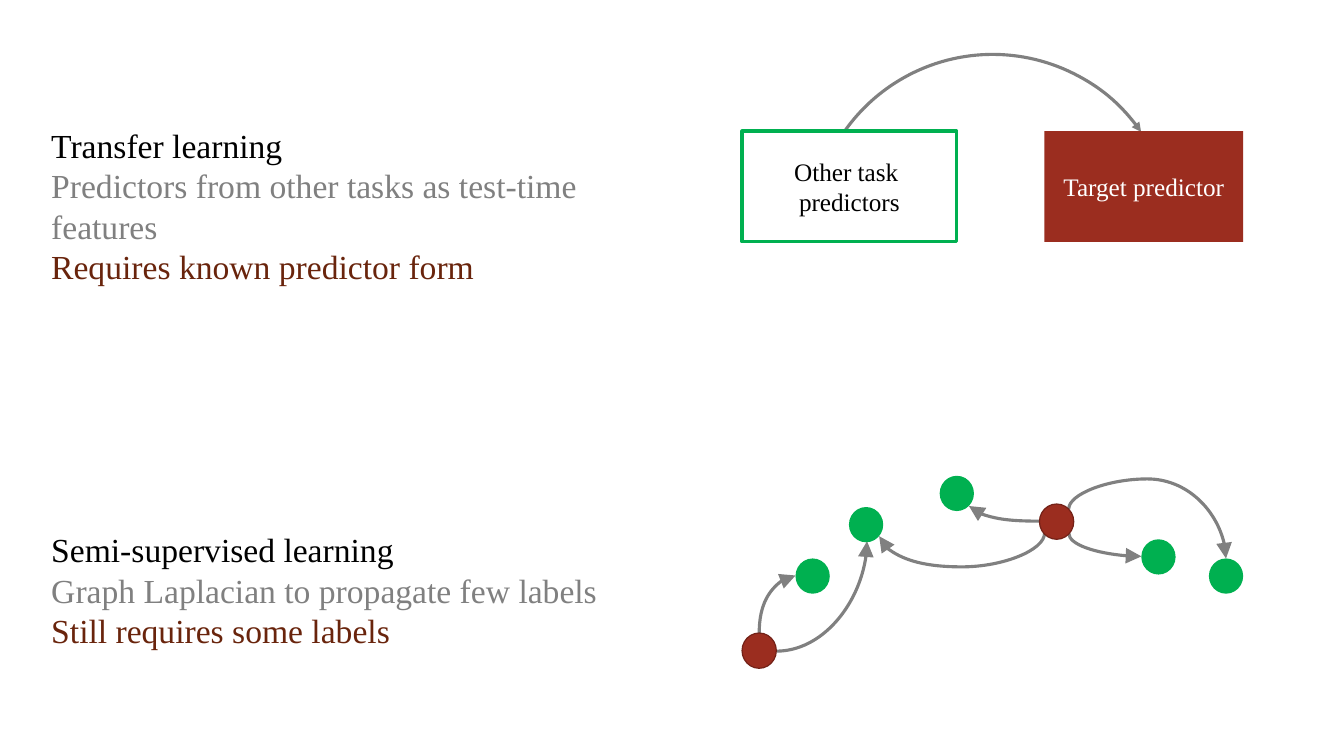
from lxml.etree import SubElement
from pptx import Presentation
from pptx.dml.color import RGBColor
from pptx.enum.shapes import MSO_CONNECTOR, MSO_SHAPE
from pptx.enum.text import MSO_ANCHOR, MSO_AUTO_SIZE, PP_ALIGN
from pptx.oxml.ns import qn
from pptx.util import Inches, Pt

FONT = "Times New Roman"
BLACK = RGBColor(0x00, 0x00, 0x00)
WHITE = RGBColor(0xFF, 0xFF, 0xFF)
GRAY = RGBColor(0x80, 0x80, 0x80)
BROWN = RGBColor(0x69, 0x24, 0x0C)
GREEN = RGBColor(0x00, 0xB0, 0x50)
RED = RGBColor(0x9B, 0x2D, 0x1F)
DARK_RED = RGBColor(0x73, 0x21, 0x17)

NODE_W, NODE_H = 0.34, 0.35
UNLABELED = [(9.32, 4.72), (7.89, 5.54), (11.32, 5.35), (11.99, 5.54), (8.42, 5.03)]
LABELED = [(10.31, 5), (7.36, 6.28)]
CURVES = [
    ((10.6, 5.29), (11.32, 5.52), 270, None),
    ((10.31, 5.17), (9.61, 5.02), 180, None),
    ((10.36, 5.29), (8.72, 5.32), 90, 11.16),
    ((7.7, 6.46), (8.6, 5.37), 0, None),
    ((7.53, 6.28), (7.89, 5.71), 90, None),
    ((10.6, 5.05), (12.16, 5.54), 270, -0.61),
]


def add_run(p, text, size, color):
    r = p.add_run()
    r.text = text
    r.font.name = FONT
    r.font.size = Pt(size)
    r.font.color.rgb = color


def add_summary(s, left, top, width, lines):
    sp = s.shapes.add_textbox(Inches(left), Inches(top), Inches(width), Inches(1.31))
    tf = sp.text_frame
    tf.word_wrap = True
    tf.auto_size = MSO_AUTO_SIZE.SHAPE_TO_FIT_TEXT
    for i, (text, color) in enumerate(zip(lines, (BLACK, GRAY, BROWN))):
        p = tf.add_paragraph() if i else tf.paragraphs[0]
        add_run(p, text, 24, color)


def add_shape(s, kind, left, top, width, height, fill=None, line=None, weight=2.25):
    sp = s.shapes.add_shape(kind, Inches(left), Inches(top), Inches(width), Inches(height))
    sp.shadow.inherit = False
    if fill is None:
        sp.fill.background()
    else:
        sp.fill.solid()
        sp.fill.fore_color.rgb = fill
    if line is None:
        sp.line.fill.background()
    else:
        sp.line.color.rgb = line
        sp.line.width = Pt(weight)
    return sp


def add_box(s, left, width, lines, color, fill=None, line=None):
    sp = add_shape(s, MSO_SHAPE.RECTANGLE, left, 1.3, width, 1.1, fill, line)
    tf = sp.text_frame
    tf.word_wrap = True
    tf.vertical_anchor = MSO_ANCHOR.MIDDLE
    p = tf.paragraphs[0]
    p.alignment = PP_ALIGN.CENTER
    for i, text in enumerate(lines):
        if i:
            p.add_line_break()
        add_run(p, text, 18, color)


def add_arrowhead(sp, size):
    ln = sp.line._get_or_add_ln()
    SubElement(ln, qn("a:tailEnd"), type="triangle", w=size, len=size)


def add_arc(s):
    sp = add_shape(s, MSO_SHAPE.ARC, 8.05, 0.54, 3.59, 3.59, line=GRAY)
    sp.rotation = 326.7
    sp.adjustments[0] = 148.96
    sp.adjustments[1] = 215.06
    add_arrowhead(sp, "med")


def add_curve(s, start, end, rotation, bend):
    dx, dy = end[0] - start[0], end[1] - start[1]
    cx, cy = (start[0] + end[0]) / 2, (start[1] + end[1]) / 2
    w, h = {0: (dx, dy), 90: (dy, -dx), 180: (-dx, -dy), 270: (-dy, dx)}[rotation]
    sp = s.shapes.add_connector(
        MSO_CONNECTOR.CURVE,
        Inches(cx - w / 2), Inches(cy - h / 2), Inches(cx + w / 2), Inches(cy + h / 2))
    sp.line.color.rgb = GRAY
    sp.line.width = Pt(2.25)
    add_arrowhead(sp, "lg")
    pr = sp._element.spPr
    SubElement(pr, qn("a:effectLst"))
    pr.find(qn("a:xfrm")).set("rot", str(rotation * 60000))
    geom = pr.find(qn("a:prstGeom"))
    if bend is None:
        geom.set("prst", "curvedConnector2")
    else:
        guide = SubElement(geom.find(qn("a:avLst")), qn("a:gd"))
        guide.set("name", "adj1")
        guide.set("fmla", f"val {round(bend * 100000)}")


def main():
    prs = Presentation()
    prs.slide_width, prs.slide_height = Inches(13.33), Inches(7.5)
    s = prs.slides.add_slide(prs.slide_layouts[6])

    add_arc(s)
    add_summary(s, 0.41, 5.2, 8.51, [
        "Semi-supervised learning",
        "Graph Laplacian to propagate few labels",
        "Still requires some labels"])
    add_summary(s, 0.41, 1.19, 6.46, [
        "Transfer learning",
        "Predictors from other tasks as test-time features",
        "Requires known predictor form"])
    add_box(s, 7.36, 2.13, ["Other task ", "predictors"], BLACK, line=GREEN)
    add_box(s, 10.36, 1.97, ["Target predictor"], WHITE, fill=RED)

    for start, end, rotation, bend in CURVES:
        add_curve(s, start, end, rotation, bend)
    for left, top in UNLABELED:
        add_shape(s, MSO_SHAPE.OVAL, left, top, NODE_W, NODE_H, GREEN)
    for left, top in LABELED:
        add_shape(s, MSO_SHAPE.OVAL, left, top, NODE_W, NODE_H, RED, DARK_RED, 0.85)

    prs.save("out.pptx")


if __name__ == "__main__":
    main()
